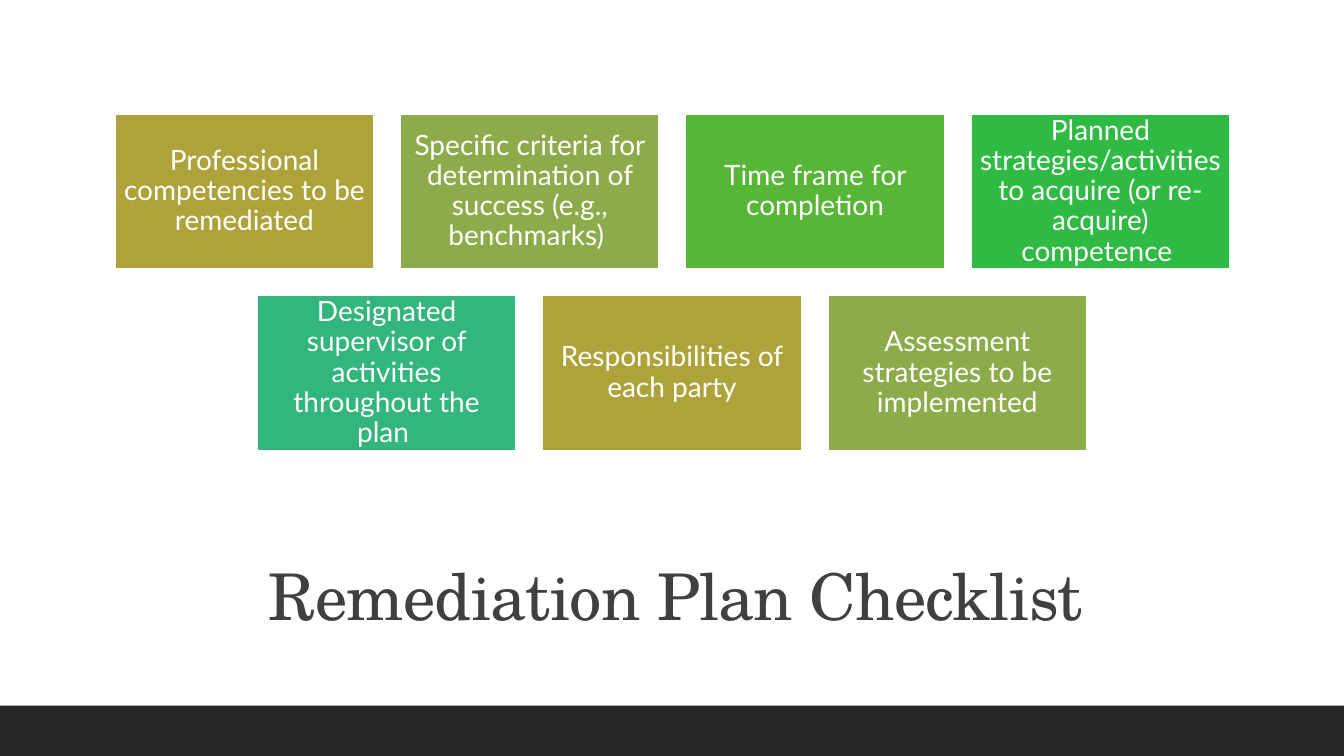
from dataclasses import dataclass

from pptx import Presentation
from pptx.dml.color import RGBColor
from pptx.enum import shapes, text
from pptx.shapes.autoshape import Shape
from pptx.slide import Slide
from pptx import util as u

EMU_PER_PX = 9144
PAGE_WIDTH, PAGE_HEIGHT = 1333, 750
CARD_WIDTH, CARD_HEIGHT = 257, 154
CARD_GAP = 26
CARDS_TOP = 113
CARD_INSET = 8
WHITE = "FFFFFF"


@dataclass(frozen=True)
class Area:
    left: int
    top: int
    width: int
    height: int


@dataclass(frozen=True)
class Card:
    label: str
    fill: str


@dataclass(frozen=True)
class TextStyle:
    font: str
    size: int
    color: str


CARD_TEXT = TextStyle("Lato", 20, WHITE)
TITLE_TEXT = TextStyle("TeX Gyre Schola", 46, "404040")

CARD_ROWS: list[list[Card]] = [
    [
        Card("Professional competencies to be remediated", "AEA33A"),
        Card("Specific criteria for determination of success (e.g., benchmarks) ", "8CAB4A"),
        Card("Time frame for completion", "57B636"),
        Card("Planned strategies/activities to acquire (or re-acquire) competence ", "2EBA43"),
    ],
    [
        Card("Designated supervisor of activities throughout the plan ", "33B67D"),
        Card("Responsibilities of each party", "AEA33A"),
        Card("Assessment strategies to be implemented", "8CAB4A"),
    ],
]


def px(length: int) -> u.Emu:
    return u.Emu(length * EMU_PER_PX)


def color(value: str) -> RGBColor:
    return RGBColor.from_string(value)


def bounds(area: Area) -> tuple[u.Emu, u.Emu, u.Emu, u.Emu]:
    return px(area.left), px(area.top), px(area.width), px(area.height)


def set_attributes(target: object, values: dict[str, object]) -> None:
    for name, value in values.items():
        setattr(target, name, value)


def add_panel(page: Slide, area: Area, fill: str) -> Shape:
    panel = page.shapes.add_shape(shapes.MSO_SHAPE.RECTANGLE, *bounds(area))
    panel.shadow.inherit = False
    panel.fill.solid()
    panel.fill.fore_color.rgb = color(fill)
    panel.line.fill.background()
    return panel


def write(box: Shape, content: str, style: TextStyle) -> None:
    set_attributes(box.text_frame, {
        "word_wrap": True,
        "vertical_anchor": text.MSO_ANCHOR.MIDDLE,
    })
    para = box.text_frame.paragraphs[0]
    set_attributes(para, {"alignment": text.PP_ALIGN.CENTER, "line_spacing": 0.9})
    span = para.add_run()
    span.text = content
    set_attributes(span.font, {"name": style.font, "size": u.Pt(style.size)})
    span.font.color.rgb = color(style.color)


def add_card(page: Slide, area: Area, card: Card) -> None:
    box = add_panel(page, area, card.fill)
    box.line.color.rgb = color(WHITE)
    box.line.width = u.Pt(1.25)
    sides = ("left", "top", "right", "bottom")
    set_attributes(box.text_frame, {f"margin_{side}": px(CARD_INSET) for side in sides})
    write(box, card.label, CARD_TEXT)


def add_card_row(page: Slide, top: int, cards: list[Card]) -> None:
    pitch = CARD_WIDTH + CARD_GAP
    row_width = len(cards) * pitch - CARD_GAP
    left = round((PAGE_WIDTH - row_width) / 2)
    for column, card in enumerate(cards):
        add_card(page, Area(left + column * pitch, top, CARD_WIDTH, CARD_HEIGHT), card)


def add_title(page: Slide, area: Area, content: str) -> None:
    box = page.shapes.add_textbox(*bounds(area))
    write(box, content, TITLE_TEXT)
    box.text_frame.paragraphs[0].runs[0].font._element.set("spc", "-50")


def main() -> None:
    deck = Presentation()
    set_attributes(deck, {"slide_width": px(PAGE_WIDTH), "slide_height": px(PAGE_HEIGHT)})
    page = deck.slides.add_slide(deck.slide_layouts[6])
    add_panel(page, Area(0, 0, PAGE_WIDTH, PAGE_HEIGHT), WHITE)
    add_title(page, Area(120, 530, 1100, 130), "Remediation Plan Checklist")
    add_panel(page, Area(0, 700, PAGE_WIDTH, 50), "262626")
    for row, cards in enumerate(CARD_ROWS):
        add_card_row(page, CARDS_TOP + row * (CARD_HEIGHT + CARD_GAP), cards)
    deck.save("out.pptx")


if __name__ == "__main__":
    main()
